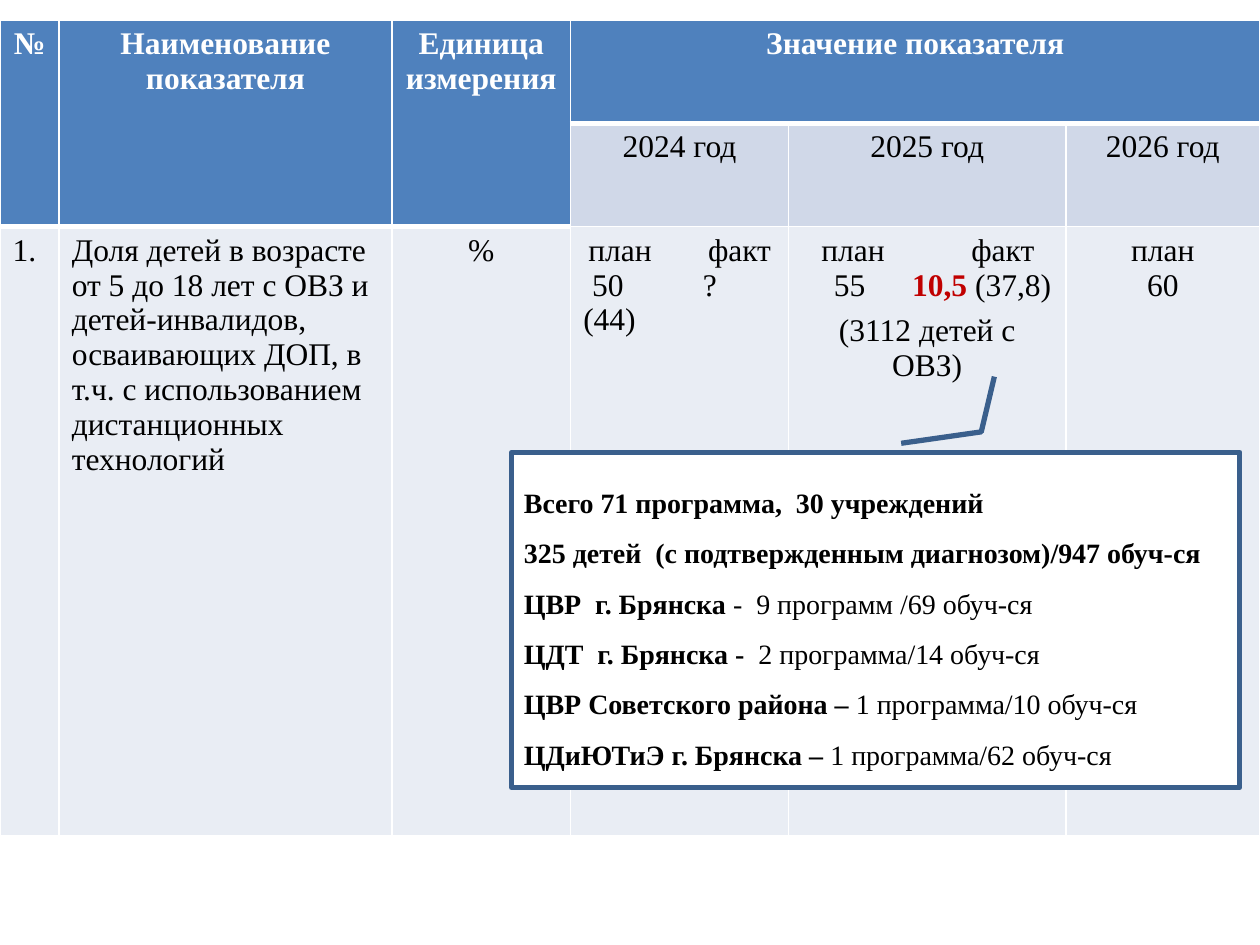
from pptx import Presentation
from pptx.dml.color import RGBColor
from pptx.enum.shapes import MSO_SHAPE
from pptx.enum.text import MSO_ANCHOR, PP_ALIGN
from pptx.oxml.ns import qn
from pptx.util import Inches, Pt
from lxml.etree import SubElement

# Content
FONT = "Times New Roman"
WHITE, BLACK, RED = "FFFFFF", "000000", "C00000"
HEADER, SUBHEADER, BODY, CALLOUT_LINE = "4F81BD", "D0D8E8", "E9EDF4", "3A5F8C"

COLUMN_WIDTHS = [0.47, 2.64, 1.42, 1.73, 2.2, 1.54]
ROW_HEIGHTS = [0.82, 0.82, 4.83]
LAST_HEADER_ROWS = [1, 1, 1, 0, 0, 0]

HEADINGS = ["№", "Наименование показателя", "Единица измерения", "Значение показателя"]
YEARS = ["2024 год", "2025 год", "2026 год"]
MERGES = [((0, 0), (1, 0)), ((0, 1), (1, 1)), ((0, 2), (1, 2)), ((0, 3), (0, 5))]

# Each body paragraph: text or runs, then its format
CENTERED = {"align": PP_ALIGN.CENTER}
INDICATOR = [
    [("1.", {})],
    [("Доля детей в возрасте от 5 до 18 лет с ОВЗ и детей-инвалидов, "
      "осваивающих ДОП, в  т.ч. с использованием", {}),
     ("дистанционных технологий", {})],
    [("%", CENTERED)],
    [("\tплан\tфакт", {"tabs": [0.04, 0.99]}),
     ("\t50\t? (44)", {"tabs": [0.07, 0.95]})],
    [("\tплан\tфакт", {"tabs": [0.16, 1.35]}),
     ([("\t55\t", {}), ("10,5", {"bold": True, "color": RED}), (" (37,8)", {})],
      {"tabs": [0.26, 0.88]}),
     ("(3112 детей с ОВЗ)", {**CENTERED, "before": 6})],
    [("план", CENTERED), ("60", CENTERED)],
]

# Each callout line: bold part, regular part
PROGRAMS = [
    ("Всего 71 программа,  30 учреждений", ""),
    ("325 детей  (с подтвержденным диагнозом)/947 обуч-ся", ""),
    ("ЦВР  г. Брянска ", "-  9 программ /69 обуч-ся"),
    ("ЦДТ  г. Брянска -  ", "2 программа/14 обуч-ся"),
    ("ЦВР Советского района – ", "1 программа/10 обуч-ся"),
    ("ЦДиЮТиЭ г. Брянска – ", "1 программа/62 обуч-ся"),
]
CALLOUT_POINTS = [-0.226, 0.663, -0.061, 0.645, -0.027, 0.535]


def rgb(value):
    return RGBColor.from_string(value)


def write(paragraph, text, size=18, color=BLACK, bold=False, align=PP_ALIGN.LEFT,
          tabs=(), before=0, line_spacing=None):
    """Fill a paragraph with a string or with (text, format) runs."""
    paragraph.alignment = align
    paragraph.space_before = Pt(before)
    if line_spacing:
        paragraph.line_spacing = line_spacing
    if tabs:
        tab_list = SubElement(paragraph._p.get_or_add_pPr(), qn("a:tabLst"))
        for position in tabs:
            SubElement(tab_list, qn("a:tab"), pos=str(Inches(position)), algn="l")
    runs = [(text, {})] if isinstance(text, str) else text
    for run_text, style in runs:
        run = paragraph.add_run()
        run.text = run_text
        run.font.name = FONT
        run.font.size = Pt(size)
        run.font.bold = style.get("bold", bold)
        run.font.color.rgb = rgb(style.get("color", color))


def write_all(text_frame, paragraphs):
    for index, (text, style) in enumerate(paragraphs):
        paragraph = text_frame.paragraphs[0] if index == 0 else text_frame.add_paragraph()
        write(paragraph, text, **style)


def format_cell(cell, fill, borders):
    properties = cell._tc.get_or_add_tcPr()
    for side, width in borders.items():
        line = SubElement(properties, qn(f"a:ln{side}"), w=str(Pt(width)))
        solid = SubElement(line, qn("a:solidFill"))
        SubElement(solid, qn("a:srgbClr"), val=WHITE)
    cell.fill.solid()
    cell.fill.fore_color.rgb = rgb(fill)


presentation = Presentation()
presentation.slide_width, presentation.slide_height = Inches(10), Inches(7.5)
slide = presentation.slides.add_slide(presentation.slide_layouts[6])

# Table grid
table = slide.shapes.add_table(
    len(ROW_HEIGHTS), len(COLUMN_WIDTHS), Inches(0), Inches(0.16),
    Inches(sum(COLUMN_WIDTHS)), Inches(sum(ROW_HEIGHTS))).table
for column, width in zip(table.columns, COLUMN_WIDTHS):
    column.width = Inches(width)
for row, height in zip(table.rows, ROW_HEIGHTS):
    row.height = Inches(height)

# Cell fills and borders, with a thick line under the header
for row in range(len(ROW_HEIGHTS)):
    for column, last_header_row in enumerate(LAST_HEADER_ROWS):
        if row <= last_header_row:
            fill = HEADER
        else:
            fill = SUBHEADER if row == 1 else BODY
        top = 3 if row == last_header_row + 1 else 1
        bottom = 3 if row == last_header_row else 1
        format_cell(table.cell(row, column), fill, {"L": 1, "R": 1, "T": top, "B": bottom})
for first, last in MERGES:
    table.cell(*first).merge(table.cell(*last))

# Table text
for column, heading in enumerate(HEADINGS):
    write_all(table.cell(0, column).text_frame,
              [(heading, {**CENTERED, "color": WHITE, "bold": True})])
for column, year in enumerate(YEARS, start=3):
    write_all(table.cell(1, column).text_frame, [(year, CENTERED)])
for column, paragraphs in enumerate(INDICATOR):
    write_all(table.cell(2, column).text_frame, paragraphs)

# Callout with the programme list
callout = slide.shapes.add_shape(
    MSO_SHAPE.LINE_CALLOUT_2, Inches(4.06), Inches(3.59), Inches(5.78), Inches(2.66))
for index, value in enumerate(CALLOUT_POINTS):
    callout.adjustments[index] = value
callout.shadow.inherit = False
callout.fill.solid()
callout.fill.fore_color.rgb = rgb(WHITE)
callout.line.color.rgb = rgb(CALLOUT_LINE)
callout.line.width = Pt(3)
callout.text_frame.word_wrap = True
callout.text_frame.vertical_anchor = MSO_ANCHOR.MIDDLE
write_all(callout.text_frame, [
    ([(text, {"bold": bold}) for text, bold in ((name, True), (count, False)) if text],
     {"size": 16, "line_spacing": 1.5})
    for name, count in PROGRAMS])

presentation.save("out.pptx")
